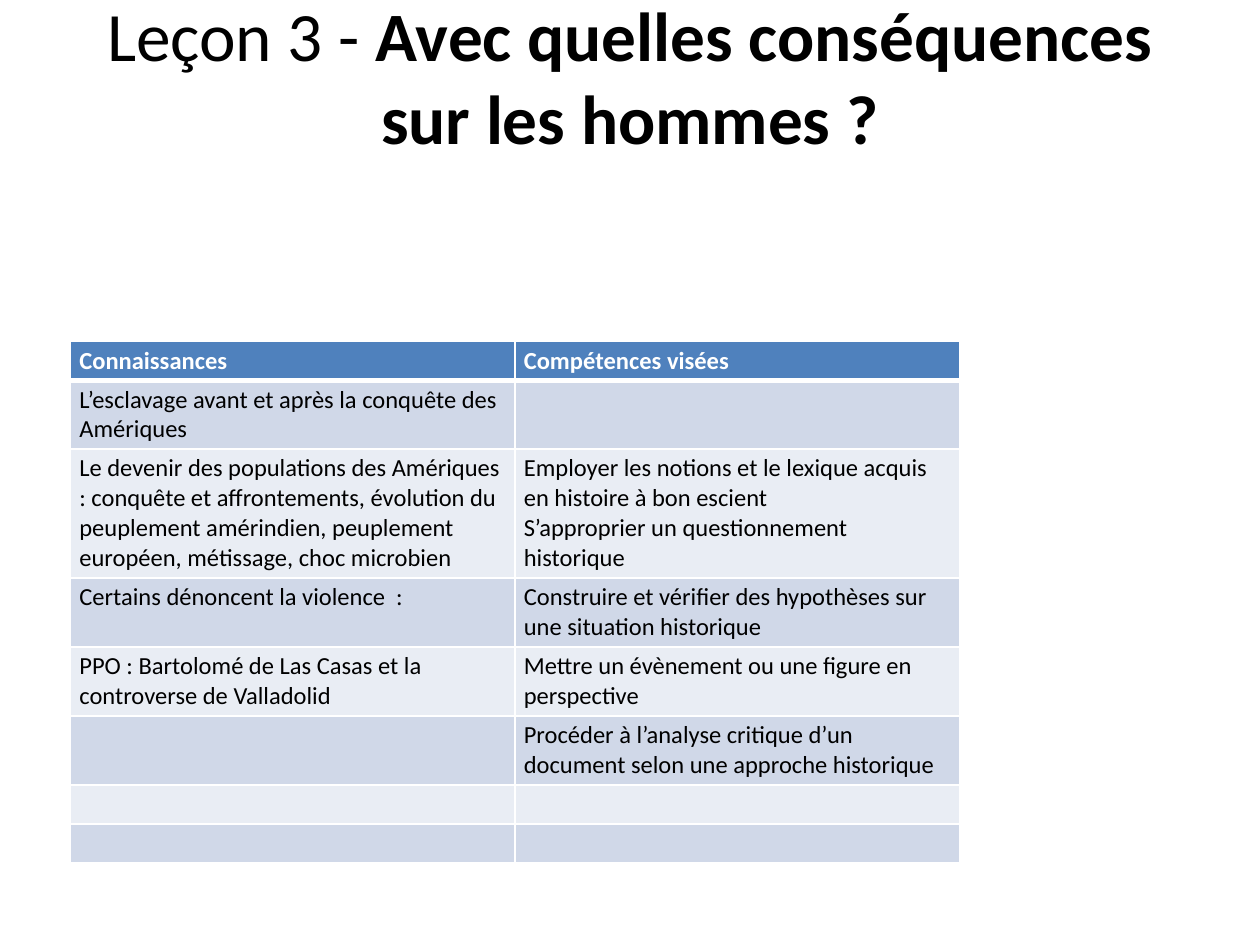
from dataclasses import dataclass

from lxml import etree
from pptx import Presentation
from pptx.dml.color import RGBColor
from pptx.enum import lang, text
from pptx.oxml.ns import qn
from pptx.util import Cm, Pt


@dataclass(frozen=True)
class Theme:
    font: str = "Calibri"
    title_size: float = 39.6
    cell_size: float = 14
    ink: str = "000000"
    white: str = "FFFFFF"
    header: str = "4F81BD"
    bands: tuple[str, str] = ("D0D8E8", "E9EDF4")
    rule: float = 1
    header_rule: float = 3


@dataclass(frozen=True)
class Row:
    """One table row; "\\n" starts a paragraph, "\\v" breaks a line."""
    knowledge: str = ""
    skills: str = ""
    lines: int = 1


THEME = Theme()
COLUMN_WIDTH = Cm(8.96)

ROWS = [
    Row("Connaissances", "Compétences visées"),
    Row("L’esclavage avant et après la conquête des Amériques", lines=2),
    Row("Le devenir des populations des Amériques\v: conquête et affrontements, "
        "évolution du peuplement amérindien, peuplement européen, métissage, choc microbien",
        "Employer les notions et le lexique acquis en histoire à bon escient\n"
        "S’approprier un questionnement historique", lines=4),
    Row("Certains dénoncent la violence  :",
        "Construire et vérifier des hypothèses sur une situation historique", lines=2),
    Row("PPO : Bartolomé de Las Casas et la controverse de Valladolid",
        "Mettre un évènement ou une figure en perspective", lines=2),
    Row(skills="Procéder à l’analyse critique d’un document selon une approche historique",
        lines=2),
    Row(),
    Row(),
]


def add_run(paragraph, words: str, size: float, color: str, bold: bool = False) -> None:
    run = paragraph.add_run()
    run.text = words
    run.font.name = THEME.font
    run.font.size = Pt(size)
    run.font.bold = bold
    run.font.language_id = lang.MSO_LANGUAGE_ID.FRENCH
    run.font.color.rgb = RGBColor.from_string(color)


def add_title(slide) -> None:
    shape = slide.shapes.add_textbox(Cm(1.27), Cm(0.76), Cm(22.86), Cm(3.18))
    frame = shape.text_frame
    frame.word_wrap = True
    frame.vertical_anchor = text.MSO_ANCHOR.MIDDLE
    frame.margin_bottom = Cm(1.8)  # lifts the title towards the top edge
    paragraph = frame.paragraphs[0]
    paragraph.alignment = text.PP_ALIGN.CENTER
    add_run(paragraph, "Leçon 3 - ", THEME.title_size, THEME.ink)
    add_run(paragraph, "Avec quelles conséquences sur les hommes ?",
            THEME.title_size, THEME.ink, bold=True)


def set_borders(cell, top: float, bottom: float) -> None:
    properties = cell._tc.get_or_add_tcPr()
    widths = {"L": THEME.rule, "R": THEME.rule, "T": top, "B": bottom}
    for side, width in widths.items():
        line = etree.SubElement(properties, qn(f"a:ln{side}"), w=str(Pt(width)))
        fill = etree.SubElement(line, qn("a:solidFill"))
        etree.SubElement(fill, qn("a:srgbClr"), val=THEME.white)


def write_paragraph(paragraph, words: str, is_header: bool) -> None:
    if not words:  # keeps an empty row as low as a one-line row
        etree.SubElement(paragraph._p, qn("a:endParaRPr"),
                         sz=str(int(THEME.cell_size * 100)))
        return
    for index, part in enumerate(words.split("\v")):
        if index:
            paragraph.add_line_break()
        add_run(paragraph, part, THEME.cell_size,
                THEME.white if is_header else THEME.ink, bold=is_header)


def fill_cell(cell, words: str, row_index: int) -> None:
    is_header = row_index == 0
    set_borders(cell,
                top=THEME.header_rule if row_index == 1 else THEME.rule,
                bottom=THEME.header_rule if is_header else THEME.rule)
    background = THEME.header if is_header else THEME.bands[(row_index - 1) % 2]
    cell.fill.solid()
    cell.fill.fore_color.rgb = RGBColor.from_string(background)
    cell.margin_left = cell.margin_right = Cm(0.18)
    cell.margin_top = cell.margin_bottom = Cm(0.09)

    frame = cell.text_frame
    for index, line in enumerate(words.split("\n")):
        paragraph = frame.add_paragraph() if index else frame.paragraphs[0]
        write_paragraph(paragraph, line, is_header)


def add_skills_table(slide) -> None:
    heights = [Cm(0.18 + 0.605 * row.lines) for row in ROWS]
    table = slide.shapes.add_table(len(ROWS), 2, Cm(1.42), Cm(6.88),
                                   2 * COLUMN_WIDTH, sum(heights)).table
    for column in table.columns:
        column.width = COLUMN_WIDTH
    for row_index, (row, height) in enumerate(zip(ROWS, heights)):
        table.rows[row_index].height = height
        for column_index, words in enumerate((row.knowledge, row.skills)):
            fill_cell(table.cell(row_index, column_index), words, row_index)


def main() -> None:
    presentation = Presentation()
    presentation.slide_width, presentation.slide_height = Cm(25.4), Cm(19.05)
    slide = presentation.slides.add_slide(presentation.slide_layouts[6])
    add_title(slide)
    add_skills_table(slide)
    presentation.save("out.pptx")


if __name__ == "__main__":
    main()
